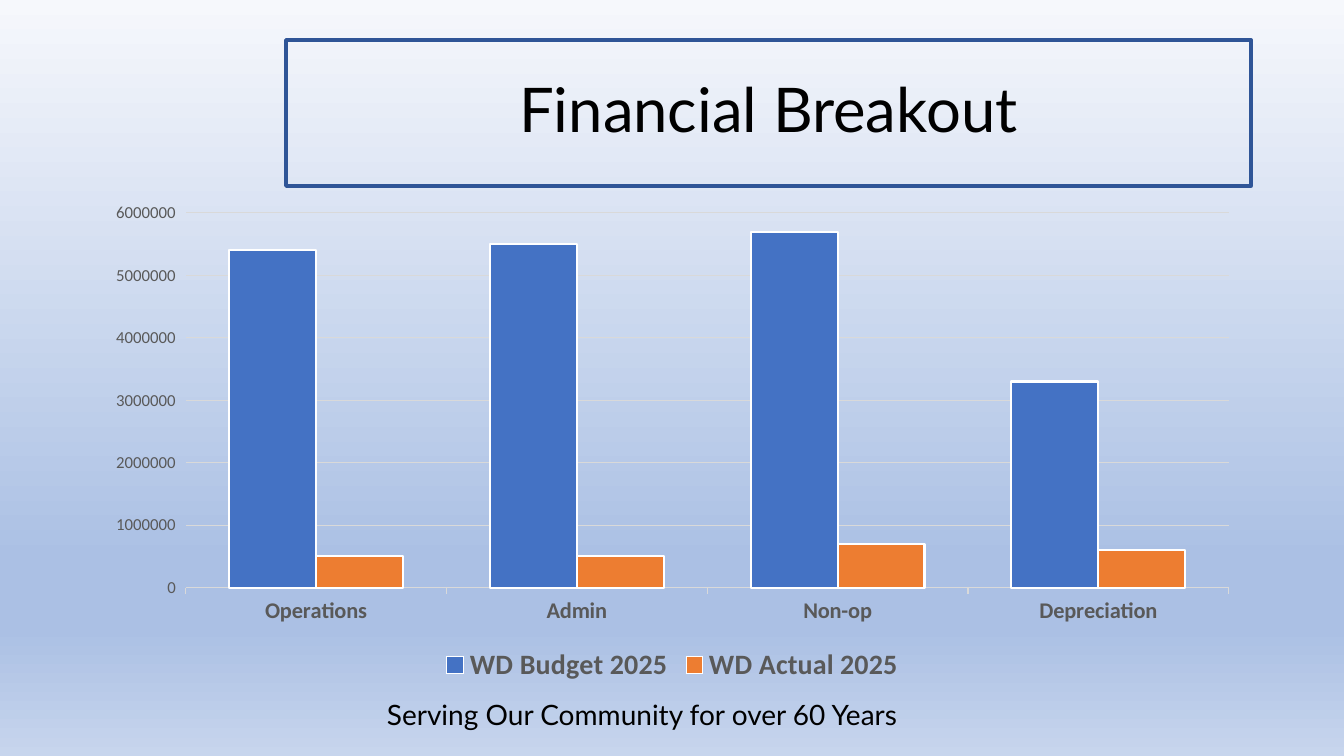
from lxml import etree
from pptx import Presentation
from pptx.chart.data import CategoryChartData
from pptx.dml.color import RGBColor
from pptx.enum.chart import XL_CHART_TYPE as ChartType
from pptx.enum.chart import XL_LEGEND_POSITION as LegendPosition
from pptx.enum.chart import XL_TICK_MARK as TickMark
from pptx.enum.text import MSO_ANCHOR as Anchor
from pptx.enum.text import MSO_AUTO_SIZE as AutoSize
from pptx.enum.text import PP_ALIGN as Align
from pptx.oxml.ns import qn
from pptx.util import Pt

PX = 914400 * 10 / 1008
BLACK = RGBColor(0x00, 0x00, 0x00)
WHITE = RGBColor(0xFF, 0xFF, 0xFF)
GRAY = RGBColor(0x59, 0x59, 0x59)
LIGHT_GRAY = RGBColor(0xD9, 0xD9, 0xD9)
NAVY = RGBColor(0x2F, 0x55, 0x97)
BLUE = RGBColor(0x44, 0x72, 0xC4)
ORANGE = RGBColor(0xED, 0x7D, 0x31)
PALE = RGBColor(0xF6, 0xF8, 0xFC)
SKY = RGBColor(0xAB, 0xC0, 0xE4)
MIST = RGBColor(0xC7, 0xD5, 0xED)
BACKDROP = [(0, PALE), (74, SKY), (83, SKY), (100, MIST)]
CATEGORIES = ["Operations", "Admin", "Non-op", "Depreciation"]
SERIES = [
    ("WD Budget 2025", BLUE, [5400000, 5500000, 5700000, 3300000]),
    ("WD Actual 2025", ORANGE, [500000, 500000, 700000, 600000]),
]


def px(*lengths):
    """Turn pixel lengths into a list of EMU lengths."""
    return [round(length * PX) for length in lengths]


def style_font(font, size, color, name="Calibri", bold=False):
    """Set the face, size, weight and colour of a font."""
    font.name, font.size, font.bold = name, Pt(size), bold
    font.color.rgb = color


def style_line(line, color, width):
    """Give a line a solid colour and a width in points."""
    line.color.rgb = color
    line.width = Pt(width)


def write_text(frame, text, size, color=BLACK, name="Lato", align=Align.LEFT, spacing=1.0):
    """Write one formatted paragraph into a text frame."""
    para = frame.paragraphs[0]
    para.alignment, para.line_spacing = align, spacing
    span = para.add_run()
    span.text = text
    style_font(span.font, size, color, name)


def paint_background(page, stops):
    """Fill the page with a top-to-bottom gradient."""
    page.background.fill.gradient()
    gradient = next(page.element.iter(qn("a:gradFill")))
    for child in list(gradient):
        gradient.remove(child)
    stop_list = etree.SubElement(gradient, qn("a:gsLst"))
    for percent, color in stops:
        stop = etree.SubElement(stop_list, qn("a:gs"), pos=str(percent * 1000))
        etree.SubElement(stop, qn("a:srgbClr"), val=str(color))
    etree.SubElement(gradient, qn("a:lin"), ang="5400000", scaled="0")


def add_title(page, box):
    """Place the framed slide title in the given box."""
    title = page.shapes.title
    title.left, title.top, title.width, title.height = px(*box)
    style_line(title.line, NAVY, 2.5)
    frame = title.text_frame
    frame.vertical_anchor, frame.auto_size = Anchor.MIDDLE, AutoSize.NONE
    write_text(frame, "Financial Breakout", 44, align=Align.CENTER, spacing=0.9)


def add_motto(page, box):
    """Place the closing motto in the given box."""
    frame = page.shapes.add_textbox(*px(*box)).text_frame
    frame.word_wrap, frame.auto_size = False, AutoSize.SHAPE_TO_FIT_TEXT
    write_text(frame, "Serving Our Community for over 60 Years", 20)


def add_budget_chart(page, box):
    """Place the budget and actual column chart in the given box."""
    data = CategoryChartData()
    data.categories = CATEGORIES
    for name, _, values in SERIES:
        data.add_series(name, values)
    chart = page.shapes.add_chart(ChartType.COLUMN_CLUSTERED, *px(*box), data).chart
    style_font(chart.font, 10, BLACK)
    chart.has_title = False

    plot = chart.plots[0]
    plot.gap_width, plot.overlap, plot.vary_by_categories = 100, 0, False
    for series, (_, color, _) in zip(plot.series, SERIES):
        series.invert_if_negative = False
        series.format.fill.solid()
        series.format.fill.fore_color.rgb = color
        style_line(series.format.line, WHITE, 1.5)

    category_axis, value_axis = chart.category_axis, chart.value_axis
    for axis in (category_axis, value_axis):
        axis.major_tick_mark, axis.minor_tick_mark = TickMark.OUTSIDE, TickMark.NONE
    style_font(category_axis.tick_labels.font, 16, GRAY, bold=True)
    style_line(category_axis.format.line, LIGHT_GRAY, 0.75)
    style_font(value_axis.tick_labels.font, 12, GRAY)
    value_axis.format.line.fill.background()
    value_axis.minimum_scale, value_axis.maximum_scale = 0, 6000000
    value_axis.major_unit = 1000000
    style_line(value_axis.major_gridlines.format.line, LIGHT_GRAY, 0.75)

    chart.has_legend = True
    chart.legend.position = LegendPosition.BOTTOM
    chart.legend.include_in_layout = False
    style_font(chart.legend.font, 20, GRAY, bold=True)


def main():
    """Build the financial breakout slide and save it."""
    deck = Presentation()
    deck.slide_width, deck.slide_height = px(1344, 756)
    page = deck.slides.add_slide(deck.slide_layouts[5])
    paint_background(page, BACKDROP)
    add_title(page, (286, 40, 965, 146))
    add_motto(page, (377, 693, 554, 44))
    add_budget_chart(page, (93, 193, 1159, 495))
    deck.save("out.pptx")


if __name__ == "__main__":
    main()
